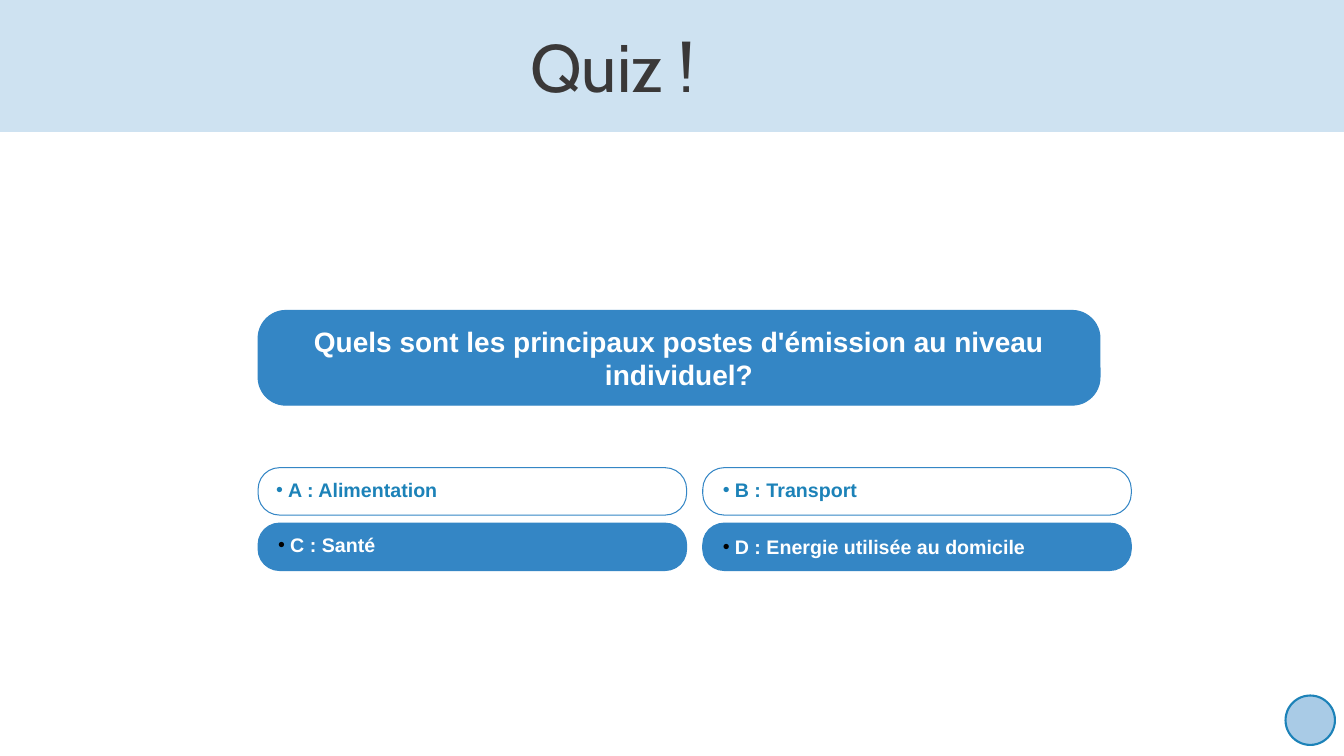
"""Quiz slide with one question and four answer choices."""
from dataclasses import dataclass

from lxml.etree import SubElement
from pptx import Presentation
from pptx.dml.color import RGBColor as RGB
from pptx.enum.shapes import MSO_SHAPE as SHAPE
from pptx.enum.text import MSO_ANCHOR as ANCHOR, PP_ALIGN as ALIGN
from pptx.oxml.ns import qn
from pptx.shapes.autoshape import Shape
from pptx.slide import Slide
from pptx.text.text import TextFrame
from pptx.util import Inches, Pt


@dataclass(frozen=True)
class Theme:
    band: str = "CEE2F1"
    blue: str = "3486C5"
    disc: str = "A9CBE6"
    accent: str = "1C82B8"
    white: str = "FFFFFF"
    black: str = "000000"
    title: str = "3A3838"
    title_font: str = "Cabin"
    body_font: str = "Arial"
    title_size: int = 48
    question_size: int = 20
    answer_size: int = 14


@dataclass(frozen=True)
class Box:
    left: float
    top: float
    width: float
    height: float

    def emu(self) -> tuple[int, int, int, int]:
        return (Inches(self.left), Inches(self.top),
                Inches(self.width), Inches(self.height))


@dataclass(frozen=True)
class Answer:
    text: str
    col: int
    row: int
    label: Box


THEME = Theme()
QUESTION = "Quels sont les principaux postes d'émission au niveau individuel?"
ANSWERS = (
    Answer("A : Alimentation", 0, 0, Box(2.64, 4.69, 3.82, 0.22)),
    Answer("B : Transport", 1, 0, Box(7.07, 4.69, 4.08, 0.4)),
    Answer("C : Santé", 0, 1, Box(2.66, 5.24, 4.08, 0.4)),
    Answer("D : Energie utilisée au domicile", 1, 1, Box(7.07, 5.26, 3.35, 0.4)),
)


def paint(sp: Shape, fill: str, line: str | None = None, width: float = 0.75) -> None:
    """Give a shape a flat fill and an optional outline."""
    sp.shadow.inherit = False
    sp.fill.solid()
    sp.fill.fore_color.rgb = RGB.from_string(fill)
    if line:
        sp.line.color.rgb = RGB.from_string(line)
        sp.line.width = Pt(width)
    else:
        sp.line.fill.background()


def write(tf: TextFrame, text: str, font: str, size: int, color: str, bold: bool) -> None:
    """Fill a text frame with one formatted paragraph."""
    tf.word_wrap = True
    tf.text = text
    f = tf.paragraphs[0].runs[0].font
    f.name, f.size, f.bold = font, Pt(size), bold
    f.color.rgb = RGB.from_string(color)


def add_pill(s: Slide, box: Box, radius: float, fill: str) -> Shape:
    """Add a rounded rectangle with a blue outline."""
    sp = s.shapes.add_shape(SHAPE.ROUNDED_RECTANGLE, *box.emu())
    sp.adjustments[0] = radius
    paint(sp, fill, THEME.blue)
    return sp


def add_label(s: Slide, answer: Answer) -> None:
    """Add the bulleted text of an answer."""
    color, dot = ((THEME.white, THEME.black) if answer.row
                  else (THEME.accent, THEME.accent))
    tf = s.shapes.add_textbox(*answer.label.emu()).text_frame
    write(tf, answer.text, THEME.body_font, THEME.answer_size, color, True)
    p_pr = tf.paragraphs[0]._p.get_or_add_pPr()
    p_pr.set("marL", str(Inches(0.12)))
    p_pr.set("indent", str(-Inches(0.12)))
    SubElement(SubElement(p_pr, qn("a:buClr")), qn("a:srgbClr"), val=dot)
    SubElement(p_pr, qn("a:buFont"), typeface=THEME.body_font)
    SubElement(p_pr, qn("a:buChar"), char="•")


def add_header(s: Slide) -> None:
    """Add the title on its pale band."""
    title = s.shapes.title
    band = s.shapes.add_shape(SHAPE.RECTANGLE, *Box(0, 0, 13.33, 1.31).emu())
    paint(band, THEME.band)
    title.element.addprevious(band.element)
    title.left, title.top, title.width, title.height = Box(1.07, 0.12, 10.01, 1.07).emu()
    write(title.text_frame, "Quiz !", THEME.title_font, THEME.title_size, THEME.title, False)
    title.text_frame.vertical_anchor = ANCHOR.MIDDLE
    title.text_frame.paragraphs[0].alignment = ALIGN.CENTER


def add_question(s: Slide) -> None:
    """Add the question box."""
    tf = add_pill(s, Box(2.56, 3.08, 8.35, 0.94), 0.294, THEME.blue).text_frame
    write(tf, QUESTION, THEME.body_font, THEME.question_size, THEME.white, True)
    tf.vertical_anchor = ANCHOR.MIDDLE
    tf.paragraphs[0].alignment = ALIGN.CENTER


def add_disc(s: Slide) -> None:
    """Add the plain disc in the bottom corner."""
    disc = s.shapes.add_shape(SHAPE.OVAL, *Box(12.75, 6.9, 0.49, 0.49).emu())
    paint(disc, THEME.disc, THEME.accent, 1.5)


def main() -> None:
    """Build and save the slide."""
    prs = Presentation()
    prs.slide_width, prs.slide_height = Inches(13.33), Inches(7.5)
    s = prs.slides.add_slide(prs.slide_layouts[5])
    add_header(s)
    for a in ANSWERS:
        box = Box(2.56 + 4.41 * a.col, 4.64 + 0.55 * a.row, 4.25, 0.47)
        add_pill(s, box, 0.453, THEME.blue if a.row else THEME.white)
    add_question(s)
    for a in ANSWERS:
        add_label(s, a)
    add_disc(s)
    prs.save("out.pptx")


if __name__ == "__main__":
    main()
